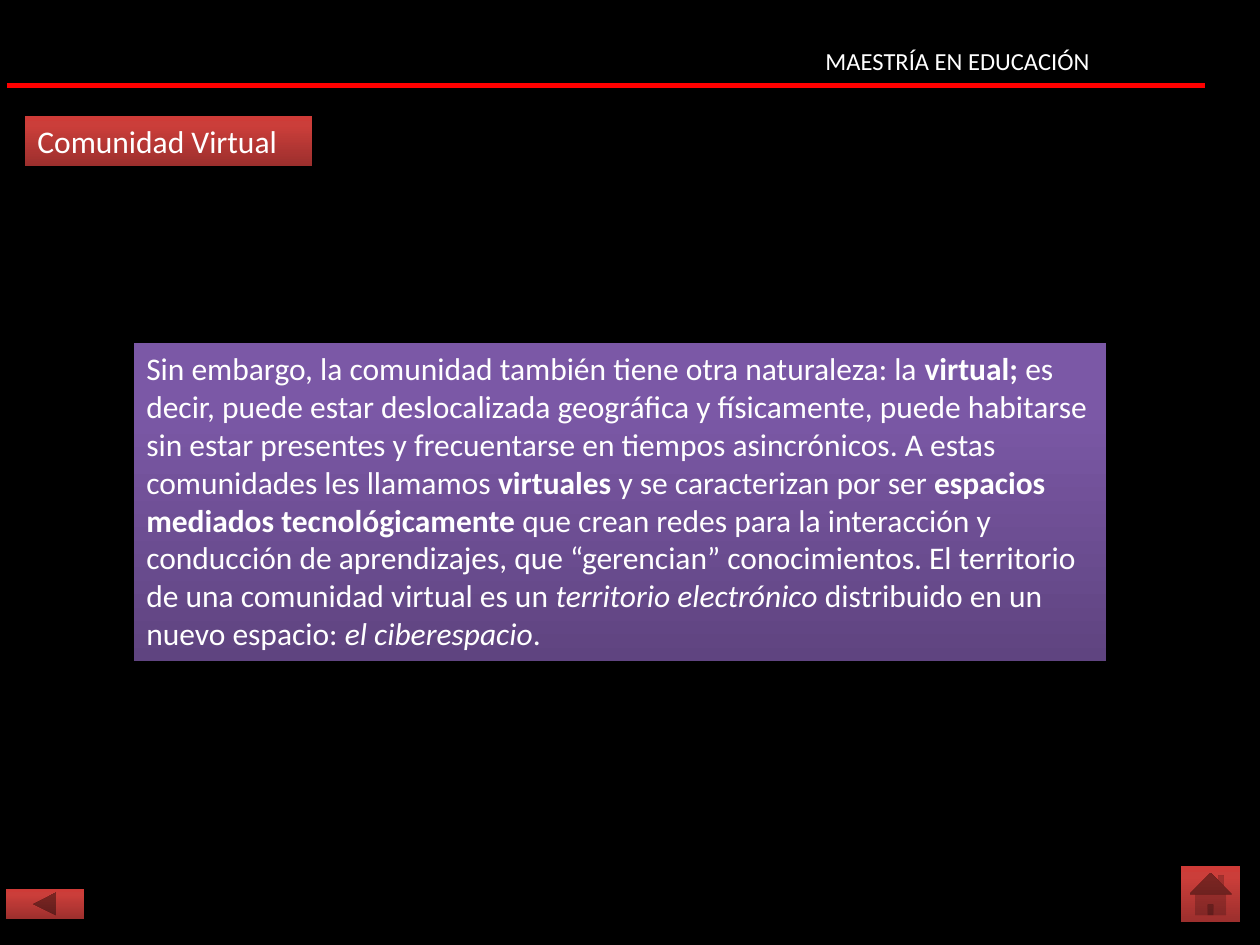
from copy import deepcopy
from lxml.etree import SubElement
from pptx import Presentation
from pptx.dml.color import RGBColor
from pptx.enum.shapes import MSO_CONNECTOR, MSO_SHAPE
from pptx.enum.text import MSO_ANCHOR, MSO_AUTO_SIZE, PP_ALIGN
from pptx.oxml.ns import qn
from pptx.util import Cm, Pt

RED = ["9C2F2D", "CB3E3A", "CE3B37"]
PURPLE = ["5F4480", "7B58A6", "7C57A8"]


def write(sp, *parts, size=18, color="FFFFFF", align=PP_ALIGN.LEFT):
    """Fill a shape with one paragraph of (text, style) parts; style is "", "b" or "i"."""
    tf = sp.text_frame
    tf.word_wrap = True
    tf.auto_size = MSO_AUTO_SIZE.NONE
    tf.vertical_anchor = MSO_ANCHOR.TOP
    p = tf.paragraphs[0]
    p.alignment = align
    for text, style in parts:
        r = p.add_run()
        r.text = text
        r.font.name = "Calibri"
        r.font.size = Pt(size)
        r.font.bold = style == "b"
        r.font.italic = style == "i"
        r.font.color.rgb = RGBColor.from_string(color)


def shade(sp, colors):
    """Give a shape a three-stop gradient that runs from bottom to top."""
    sp.shadow.inherit = False
    sp.line.fill.background()
    sp.fill.gradient()
    sp.fill.gradient_angle = 90
    stop_list = sp._element.spPr.find(".//" + qn("a:gsLst"))
    stop_list.append(deepcopy(stop_list[-1]))
    for stop, position, color in zip(sp.fill.gradient_stops, (0, 0.8, 1), colors):
        stop.position = position
        stop.color.rgb = RGBColor.from_string(color)


prs = Presentation()
prs.slide_width, prs.slide_height = Cm(25.4), Cm(19.05)
s = prs.slides.add_slide(prs.slide_layouts[5])
s.background.fill.solid()
s.background.fill.fore_color.rgb = RGBColor.from_string("000000")

# Header: programme name above a red rule
rule = s.shapes.add_connector(MSO_CONNECTOR.STRAIGHT, Cm(0.15), Cm(1.73), Cm(24.3), Cm(1.73))
rule.line.color.rgb = RGBColor.from_string("FF0000")
rule.line.width = Pt(3)
SubElement(rule._element.spPr, qn("a:effectLst"))
header = s.shapes.add_textbox(Cm(14.91), Cm(0.81), Cm(8.79), Cm(0.86))
write(header, ("MAESTRÍA EN EDUCACIÓN", ""), size=14, align=PP_ALIGN.CENTER)

# Title
title = s.shapes.title
title.left, title.top, title.width, title.height = Cm(0.5), Cm(2.33), Cm(5.8), Cm(1.02)
shade(title, RED)
write(title, ("Comunidad Virtual", ""))

# Definition
body = s.shapes.add_shape(MSO_SHAPE.RECTANGLE, Cm(2.7), Cm(6.92), Cm(19.6), Cm(6.41))
shade(body, PURPLE)
write(
    body,
    ("Sin embargo, la comunidad también tiene otra naturaleza: la ", ""),
    ("virtual; ", "b"),
    ("es decir, puede estar deslocalizada geográfica y físicamente, puede habitarse "
     "sin estar presentes y frecuentarse en tiempos asincrónicos. A estas "
     "comunidades les llamamos ", ""),
    ("virtuales ", "b"),
    ("y se caracterizan por ser ", ""),
    ("espacios mediados tecnológicamente ", "b"),
    ("que crean redes para la interacción y conducción de aprendizajes, que “gerencian” "
     "conocimientos. El territorio de una comunidad virtual es un ", ""),
    ("territorio electrónico ", "i"),
    ("distribuido en un nuevo espacio: ", ""),
    ("el ciberespacio", "i"),
    (".", ""),
)

# Navigation buttons
for kind, x, y, w, h in [
    (MSO_SHAPE.ACTION_BUTTON_BACK_OR_PREVIOUS, 0.12, 17.92, 1.57, 0.61),
    (MSO_SHAPE.ACTION_BUTTON_HOME, 23.81, 17.46, 1.19, 1.13),
]:
    shade(s.shapes.add_shape(kind, Cm(x), Cm(y), Cm(w), Cm(h)), RED)

prs.save("out.pptx")
